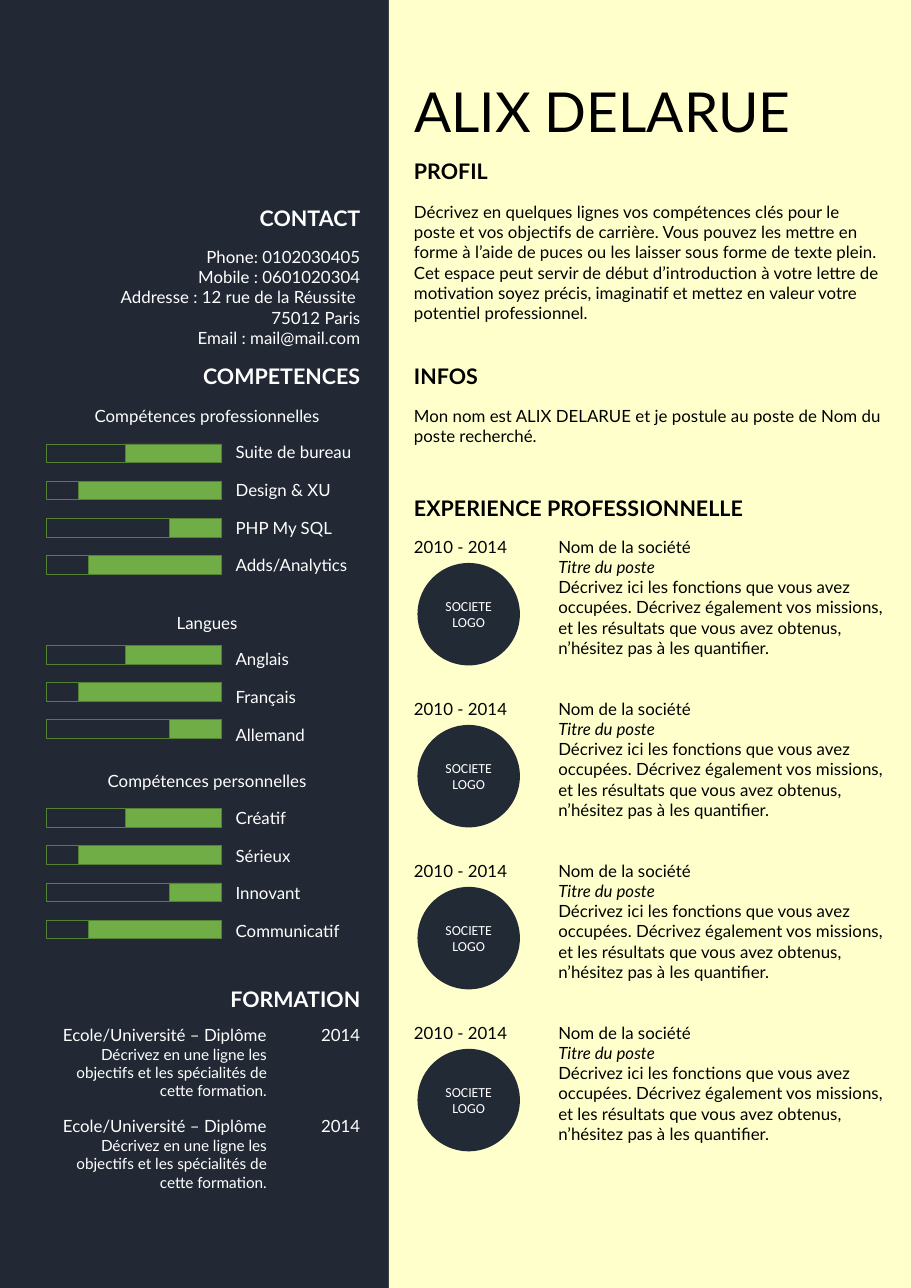
from pptx import Presentation
from pptx.dml.color import RGBColor
from pptx.enum.shapes import MSO_SHAPE as SHAPE
from pptx.enum.text import MSO_ANCHOR as ANCHOR, PP_ALIGN as ALIGN
from pptx.util import Inches, Pt

NAVY = RGBColor(0x22, 0x29, 0x35)
LOGO_NAVY = RGBColor(0x22, 0x2A, 0x35)
CREAM = RGBColor(0xFF, 0xFF, 0xCC)
GREEN = RGBColor(0x70, 0xAD, 0x47)
DARK_GREEN = RGBColor(0x54, 0x82, 0x35)
WHITE = RGBColor(0xFF, 0xFF, 0xFF)
BLACK = RGBColor(0, 0, 0)

NAME = "ALIX DELARUE"
MAIN_HEADINGS = [
    ("PROFIL", 1.39, 0.87),
    ("INFOS", 3.25, 0.78),
    ("EXPERIENCE PROFESSIONNELLE", 4.44, 3.2),
]
SIDE_HEADINGS = [
    ("CONTACT", 1.81, 1.12),
    ("COMPETENCES", 3.25, 1.63),
    ("FORMATION", 8.9, 1.39),
]
PROFILE = (
    "Décrivez en quelques lignes vos compétences clés pour le poste et vos objectifs de carrière. "
    "Vous pouvez les mettre en forme à l’aide de puces ou les laisser sous forme de texte plein. "
    "Cet espace peut servir de début d’introduction à votre lettre de motivation soyez précis, "
    "imaginatif et mettez en valeur votre potentiel professionnel."
)
INFOS = "Mon nom est ALIX DELARUE et je postule au poste de Nom du poste recherché."
CONTACT = [
    "Phone: 0102030405",
    "Mobile : 0601020304",
    "Addresse : 12 rue de la Réussite ",
    "75012 Paris",
    "Email : mail@mail.com",
]
SKILL_SECTIONS = [
    ("Compétences professionnelles", 3.63, 4.03, [
        ("Suite de bureau", 0.87), ("Design & XU", 1.3),
        ("PHP My SQL", 0.47), ("Adds/Analytics", 1.21)]),
    ("Langues", 5.51, 5.86, [
        ("Anglais", 0.87), ("Français", 1.3), ("Allemand", 0.47)]),
    ("Compétences personnelles", 6.95, 7.34, [
        ("Créatif", 0.87), ("Sérieux", 1.3),
        ("Innovant", 0.47), ("Communicatif", 1.21)]),
]
JOB = [
    "Nom de la société",
    "Titre du poste",
    "Décrivez ici les fonctions que vous avez occupées. Décrivez également vos missions, "
    "et les résultats que vous avez obtenus, n’hésitez pas à les quantifier.",
]
JOBS = [("2010 - 2014", JOB)] * 4
DEGREE = [
    "Ecole/Université – Diplôme",
    "Décrivez en une ligne les objectifs et les spécialités de cette formation.",
]
DEGREES = [("2014", DEGREE)] * 2

MAIN_LEFT, SIDE_RIGHT = 3.66, 3.37
BAR_LEFT, BAR_WIDTH, BAR_HEIGHT, BAR_STEP = 0.42, 1.59, 0.17, 0.337
LABEL_OFFSET, LABEL_STEP = 0.33, 0.343
JOB_TOP, JOB_STEP = 4.82, 1.47
DEGREE_TOP, DEGREE_STEP = 9.25, 0.83


def place(sp, x, y, w, h):
    sp.left, sp.top, sp.width, sp.height = map(Inches, (x, y, w, h))


def write(tf, lines, size, color, align=ALIGN.LEFT, bold=False, font="Lato"):
    tf.text = "\n".join(lines)
    for p in tf.paragraphs:
        p.alignment = align
        for r in p.runs:
            r.font.name = font
            r.font.size = Pt(size)
            r.font.bold = bold
            r.font.color.rgb = color


def add_text(shapes, lines, x, y, w, h, color, align=ALIGN.LEFT, size=11, bold=False, wrap=True):
    sp = shapes.add_textbox(*map(Inches, (x, y, w, h)))
    tf = sp.text_frame
    tf.word_wrap = wrap
    write(tf, lines, size, color, align, bold)
    return tf


def add_block(shapes, kind, x, y, w, h, fill=None, line=None):
    sp = shapes.add_shape(kind, *map(Inches, (x, y, w, h)))
    sp.shadow.inherit = False
    if fill is None:
        sp.fill.background()
    else:
        sp.fill.solid()
        sp.fill.fore_color.rgb = fill
    if line is None:
        sp.line.fill.background()
    else:
        sp.line.color.rgb = line
        sp.line.width = Pt(0.5)
    return sp


def add_bar(shapes, y, filled):
    group = shapes.add_group_shape().shapes
    for width, fill in ((BAR_WIDTH, None), (filled, GREEN)):
        x = BAR_LEFT + BAR_WIDTH - width
        add_block(group, SHAPE.RECTANGLE, x, y, width, BAR_HEIGHT, fill, DARK_GREEN)


def add_job(shapes, y, dates, lines):
    group = shapes.add_group_shape().shapes
    add_text(group, [dates], MAIN_LEFT, y, 1.13, 0.29, BLACK)
    tf = add_text(group, lines, 4.97, y, 3.17, 1.21, BLACK)
    tf.paragraphs[1].runs[0].font.italic = True
    logo = add_block(group, SHAPE.OVAL, 3.79, y + 0.29, 0.93, 0.93, LOGO_NAVY)
    tf = logo.text_frame
    tf.margin_left = tf.margin_right = tf.margin_top = tf.margin_bottom = 0
    tf.vertical_anchor = ANCHOR.MIDDLE
    write(tf, ["SOCIETE", "LOGO"], 9, WHITE, ALIGN.CENTER, font="Calibri")


def main():
    prs = Presentation()
    prs.slide_width, prs.slide_height = Inches(8.27), Inches(11.69)
    s = prs.slides.add_slide(prs.slide_layouts[5])
    shapes = s.shapes

    add_block(shapes, SHAPE.RECTANGLE, 0, 0, 3.53, 11.69, NAVY)
    add_block(shapes, SHAPE.RECTANGLE, 3.53, 0, 4.74, 11.69, CREAM)

    title = shapes.title
    title.element.getparent().append(title.element)
    place(title, MAIN_LEFT, 0.65, 3.74, 0.71)
    title.text_frame.word_wrap = False
    title.text_frame.vertical_anchor = ANCHOR.TOP
    write(title.text_frame, [NAME], 36, BLACK)

    for text, y, w in MAIN_HEADINGS:
        add_text(shapes, [text], MAIN_LEFT, y, w, 0.34, BLACK, size=14, bold=True, wrap=False)
    for text, y, w in SIDE_HEADINGS:
        add_text(shapes, [text], SIDE_RIGHT - w, y, w, 0.34, WHITE, ALIGN.RIGHT, 14, True, False)

    add_text(shapes, [PROFILE], MAIN_LEFT, 1.78, 4.47, 1.21, BLACK)
    add_text(shapes, [INFOS], MAIN_LEFT, 3.63, 4.47, 0.47, BLACK)
    add_text(shapes, CONTACT, 0.23, 2.19, 3.14, 1.03, WHITE, ALIGN.RIGHT)

    for i, (dates, lines) in enumerate(JOBS):
        add_job(shapes, JOB_TOP + i * JOB_STEP, dates, lines)

    for heading, top, bar_top, skills in SKILL_SECTIONS:
        add_text(shapes, [heading], 0.39, top, 2.98, 0.29, WHITE, ALIGN.CENTER)
        for i, (label, filled) in enumerate(skills):
            label_top = top + LABEL_OFFSET + i * LABEL_STEP
            add_text(shapes, [label], 2.04, label_top, 1.35, 0.29, WHITE)
            add_bar(shapes, bar_top + i * BAR_STEP, filled)

    for i, (year, lines) in enumerate(DEGREES):
        y = DEGREE_TOP + i * DEGREE_STEP
        tf = add_text(shapes, lines, 0.39, y, 2.13, 0.79, WHITE, ALIGN.RIGHT)
        tf.paragraphs[1].runs[0].font.size = Pt(10)
        add_text(shapes, [year], 2.66, y, 0.71, 0.29, WHITE, ALIGN.RIGHT)

    prs.save("out.pptx")


if __name__ == "__main__":
    main()
